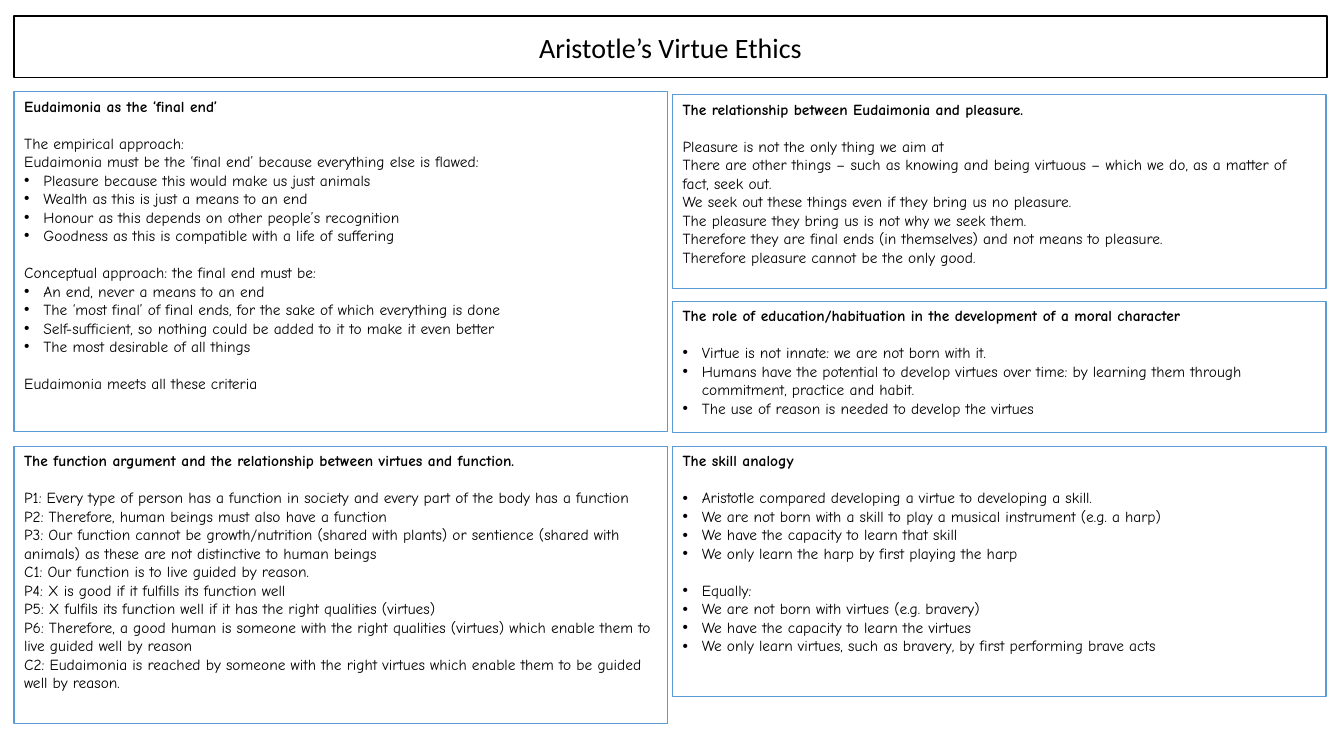
from dataclasses import dataclass

from lxml.etree import SubElement as Sub
from pptx import Presentation
from pptx.dml.color import RGBColor as RGB
from pptx.enum.text import MSO_ANCHOR as Anchor, MSO_AUTO_SIZE as Fit, PP_ALIGN as Align
from pptx.oxml.ns import qn
from pptx.util import Inches, Pt


@dataclass(frozen=True)
class Theme:
    ink: RGB = RGB(0, 0, 0)
    paper: RGB = RGB(255, 255, 255)
    blue: RGB = RGB(0x5B, 0x9B, 0xD5)
    head: str = "Calibri"
    body: str = "Comic Neue"
    big: Pt = Pt(20)
    small: Pt = Pt(11)
    edge: Pt = Pt(1)
    gap: Pt = Pt(13.2)
    hang: Inches = Inches(0.19)


THEME = Theme()
LEFT, RIGHT, WIDE = 0.14, 6.67, 6.48
MARK = "• "

# Each panel holds a box, a heading and groups of lines; a gap precedes each group.
PANELS = [
    ((LEFT, 0.91, WIDE, 3.37), "Eudaimonia as the ‘final end’", [
        ["The empirical approach:",
         "Eudaimonia must be the ‘final end’ because everything else is flawed:",
         "• Pleasure because this would make us just animals",
         "• Wealth as this is just a means to an end",
         "• Honour as this depends on other people’s recognition",
         "• Goodness as this is compatible with a life of suffering"],
        ["Conceptual approach: the final end must be:",
         "• An end, never a means to an end",
         "• The ‘most final’ of final ends, for the sake of which everything is done",
         "• Self-sufficient, so nothing could be added to it to make it even better",
         "• The most desirable of all things"],
        ["Eudaimonia meets all these criteria"]]),
    ((RIGHT, 0.94, WIDE, 1.92), "The relationship between Eudaimonia and pleasure.", [
        ["Pleasure is not the only thing we aim at",
         "There are other things – such as knowing and being virtuous – which we do, "
         "as a matter of fact, seek out.",
         "We seek out these things even if they bring us no pleasure.",
         "The pleasure they bring us is not why we seek them.",
         "Therefore they are final ends (in themselves) and not means to pleasure.",
         "Therefore pleasure cannot be the only good."]]),
    ((RIGHT, 2.99, WIDE, 1.3),
     "The role of education/habituation in the development of a moral character", [
        ["• Virtue is not innate: we are not born with it.",
         "• Humans have the potential to develop virtues over time: by learning them "
         "through commitment, practice and habit.",
         "• The use of reason is needed to develop the virtues"]]),
    ((RIGHT, 4.43, WIDE, 2.48), "The skill analogy", [
        ["• Aristotle compared developing a virtue to developing a skill.",
         "• We are not born with a skill to play a musical instrument (e.g. a harp)",
         "• We have the capacity to learn that skill",
         "• We only learn the harp by first playing the harp"],
        ["• Equally:",
         "• We are not born with virtues (e.g. bravery)",
         "• We have the capacity to learn the virtues",
         "• We only learn virtues, such as bravery, by first performing brave acts"]]),
    ((LEFT, 4.43, WIDE, 2.75),
     "The function argument and the relationship between virtues and function.", [
        ["P1: Every type of person has a function in society and every part of the body "
         "has a function",
         "P2: Therefore, human beings must also have a function",
         "P3: Our function cannot be growth/nutrition (shared with plants) or sentience "
         "(shared with animals) as these are not distinctive to human beings",
         "C1: Our function is to live guided by reason.",
         "P4: X is good if it fulfills its function well",
         "P5: X fulfils its function well if it has the right qualities (virtues)",
         "P6: Therefore, a good human is someone with the right qualities (virtues) which "
         "enable them to live guided well by reason",
         "C2: Eudaimonia is reached by someone with the right virtues which enable them "
         "to be guided well by reason."]]),
]


def assign(item, form):
    for name, value in form.items():
        setattr(item, name, value)


def frame(shape, box, edge, anchor):
    """Place and outline a shape, and return its text frame."""
    places = ("left", "top", "width", "height")
    assign(shape, dict(zip(places, map(Inches, box))))
    shape.fill.solid()
    shape.fill.fore_color.rgb = THEME.paper
    shape.line.color.rgb = edge
    shape.line.width = THEME.edge
    text = shape.text_frame
    assign(text, {"word_wrap": True, "auto_size": Fit.NONE, "vertical_anchor": anchor})
    return text


def write(para, words, face, size, bold=False):
    run = para.add_run()
    run.text = words
    assign(run.font, {"name": face, "size": size, "bold": bold})
    run.font.color.rgb = THEME.ink


def indent(para, listed):
    """Give a list line its bullet and hanging indent, and clear them elsewhere."""
    props = para._p.get_or_add_pPr()
    hang = THEME.hang if listed else 0
    props.set("marL", str(hang))
    props.set("indent", str(-hang))
    if listed:
        Sub(props, qn("a:buFont"), typeface="Arial")
        Sub(props, qn("a:buChar"), char=MARK.strip())
    else:
        Sub(props, qn("a:buNone"))


def title(shape, box, words):
    text = frame(shape, box, THEME.ink, Anchor.MIDDLE)
    para = text.paragraphs[0]
    para.alignment = Align.CENTER
    write(para, words, THEME.head, THEME.big)


def panel(shape, box, head, groups):
    text = frame(shape, box, THEME.blue, Anchor.TOP)
    for group in [[head], *groups]:
        for line in group:
            first = line is head
            para = text.paragraphs[0] if first else text.add_paragraph()
            indent(para, line.startswith(MARK))
            space = THEME.gap if line is group[0] and not first else Pt(0)
            assign(para, {"alignment": Align.LEFT, "space_before": space})
            write(para, line.removeprefix(MARK), THEME.body, THEME.small, first)


def main():
    deck = Presentation()
    assign(deck, {"slide_width": Inches(13.33), "slide_height": Inches(7.5)})
    slide = deck.slides.add_slide(deck.slide_layouts.get_by_name("Comparison"))
    top, *bodies = slide.placeholders
    title(top, (LEFT, 0.16, 13.02, 0.61), "Aristotle’s Virtue Ethics")
    bodies.append(slide.shapes.add_textbox(0, 0, 0, 0))
    for shape, (box, head, groups) in zip(bodies, PANELS):
        panel(shape, box, head, groups)
    deck.save("out.pptx")


if __name__ == "__main__":
    main()
